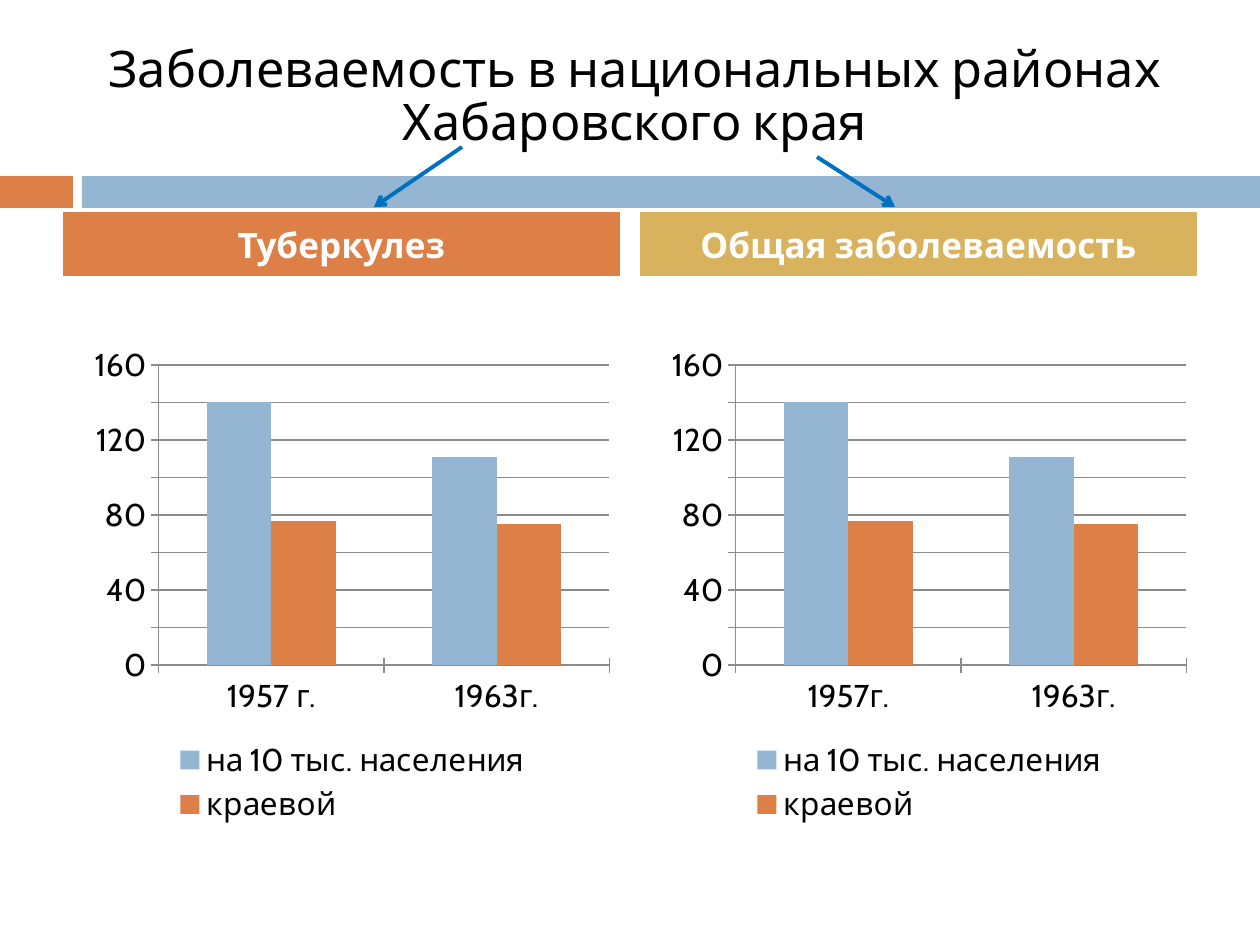
from lxml import etree
from pptx import Presentation
from pptx.chart.data import CategoryChartData
from pptx.dml.color import RGBColor
from pptx.enum.chart import XL_CHART_TYPE, XL_LEGEND_POSITION, XL_TICK_MARK
from pptx.enum.shapes import MSO_CONNECTOR, MSO_SHAPE
from pptx.enum.text import MSO_ANCHOR, MSO_AUTO_SIZE, PP_ALIGN
from pptx.oxml.ns import qn
from pptx.util import Emu, Pt

COLUMNS = XL_CHART_TYPE.COLUMN_CLUSTERED
LEGEND_BOTTOM = XL_LEGEND_POSITION.BOTTOM
CROSS = XL_TICK_MARK.CROSS
STRAIGHT = MSO_CONNECTOR.STRAIGHT
RECT = MSO_SHAPE.RECTANGLE
MIDDLE = MSO_ANCHOR.MIDDLE
NO_FIT = MSO_AUTO_SIZE.NONE
CENTER = PP_ALIGN.CENTER

COLORS = {
    "text": "000000",
    "white": "FFFFFF",
    "blue": "94B6D2",
    "orange": "DD8047",
    "gold": "D8B25C",
    "arrow": "0070C0",
    "axis": "8B8B8B",
}
FONT = "Cabin"
PX_PER_INCH = 126
COMPARISON_LAYOUT = 4


def px(n):
    return Emu(round(n * 914400 / PX_PER_INCH))


def rgb(name):
    return RGBColor.from_string(COLORS[name])


class SlideBuilder:
    def __init__(self, s):
        self.s = s

    def style_font(self, font, size, color, bold=False):
        font.name = FONT
        font.size = Pt(size)
        font.bold = bold
        font.color.rgb = rgb(color)

    def fill(self, sp, color):
        sp.fill.solid()
        sp.fill.fore_color.rgb = rgb(color)

    def placeholder(self, sp, box, text, size, color, bold=False):
        sp.left, sp.top, sp.width, sp.height = map(px, box)
        tf = sp.text_frame
        tf.text = text
        tf.word_wrap = True
        tf.auto_size = NO_FIT
        tf.vertical_anchor = MIDDLE
        p = tf.paragraphs[0]
        p.alignment = CENTER
        self.style_font(p.runs[0].font, size, color, bold)
        return p

    def title(self, box, text):
        p = self.placeholder(self.s.shapes.title, box, text, 28.8, "text")
        p.line_spacing = 0.88

    def header(self, idx, box, text, color):
        sp = self.s.placeholders[idx]
        p = self.placeholder(sp, box, text, 20, "white", bold=True)
        p.space_before = Pt(7)
        self.fill(sp, color)

    def bar(self, box, color):
        sp = self.s.shapes.add_shape(RECT, *map(px, box))
        sp.shadow.inherit = False
        self.fill(sp, color)
        sp.line.fill.background()

    def chart(self, box, categories, series):
        data = CategoryChartData()
        data.categories = categories
        for name, values, _ in series:
            data.add_series(name, values)
        chart = self.s.shapes.add_chart(COLUMNS, *map(px, box), data).chart
        self.style_font(chart.font, 18, "text")
        chart.has_title = False
        chart.has_legend = True
        chart.legend.position = LEGEND_BOTTOM
        chart.legend.include_in_layout = False

        plot = chart.plots[0]
        plot.gap_width = 150
        plot.overlap = 0
        plot.vary_by_categories = False
        for ser, (_, _, color) in zip(plot.series, series):
            self.fill(ser.format, color)

        value_axis = chart.value_axis
        value_axis.minimum_scale = 0
        value_axis.maximum_scale = 160
        value_axis.major_unit = 20
        value_axis.has_major_gridlines = True
        for axis in (chart.category_axis, value_axis):
            axis.major_tick_mark = CROSS
        for part in (chart.category_axis, value_axis, value_axis.major_gridlines):
            part.format.line.color.rgb = rgb("axis")
            part.format.line.width = Pt(0.75)

    def arrow(self, start, end):
        cn = self.s.shapes.add_connector(STRAIGHT, *map(px, start + end))
        cn.line.color.rgb = rgb("arrow")
        cn.line.width = Pt(2.25)
        ln = cn.line._get_or_add_ln()
        etree.SubElement(ln, qn("a:tailEnd"), type="arrow")
        etree.SubElement(cn._element.spPr, qn("a:effectLst"))

    def remove_placeholder(self, idx):
        el = self.s.placeholders[idx]._element
        el.getparent().remove(el)


def main():
    prs = Presentation()
    prs.slide_width, prs.slide_height = px(1260), px(945)
    s = prs.slides.add_slide(prs.slide_layouts[COMPARISON_LAYOUT])
    b = SlideBuilder(s)

    # Title and the band below it
    b.title((73, 38, 1124, 120), "Заболеваемость в национальных районах Хабаровского края")
    b.bar((0, 176, 73, 32), "orange")
    b.bar((82, 176, 1178, 32), "blue")

    # Two columns: header placeholder and chart, aligned on the right edge
    series = [
        ("на 10 тыс. населения", (140, 111), "blue"),
        ("краевой", (77, 75), "orange"),
    ]
    columns = [
        (1, 2, "Туберкулез", "orange", "1957 г."),
        (3, 4, "Общая заболеваемость", "gold", "1957г."),
    ]
    header_w, chart_w = 557, 536
    for i, (header_idx, content_idx, text, color, first_year) in enumerate(columns):
        left = 63 + i * 577
        b.header(header_idx, (left, 212, header_w, 64), text, color)
        b.remove_placeholder(content_idx)
        chart_left = left + header_w - chart_w
        b.chart((chart_left, 336, chart_w, 494), [first_year, "1963г."], series)

    # Arrows from the title to the headers
    b.arrow((817, 157), (895, 207))
    b.arrow((462, 147), (374, 207))

    prs.save("out.pptx")


if __name__ == "__main__":
    main()
